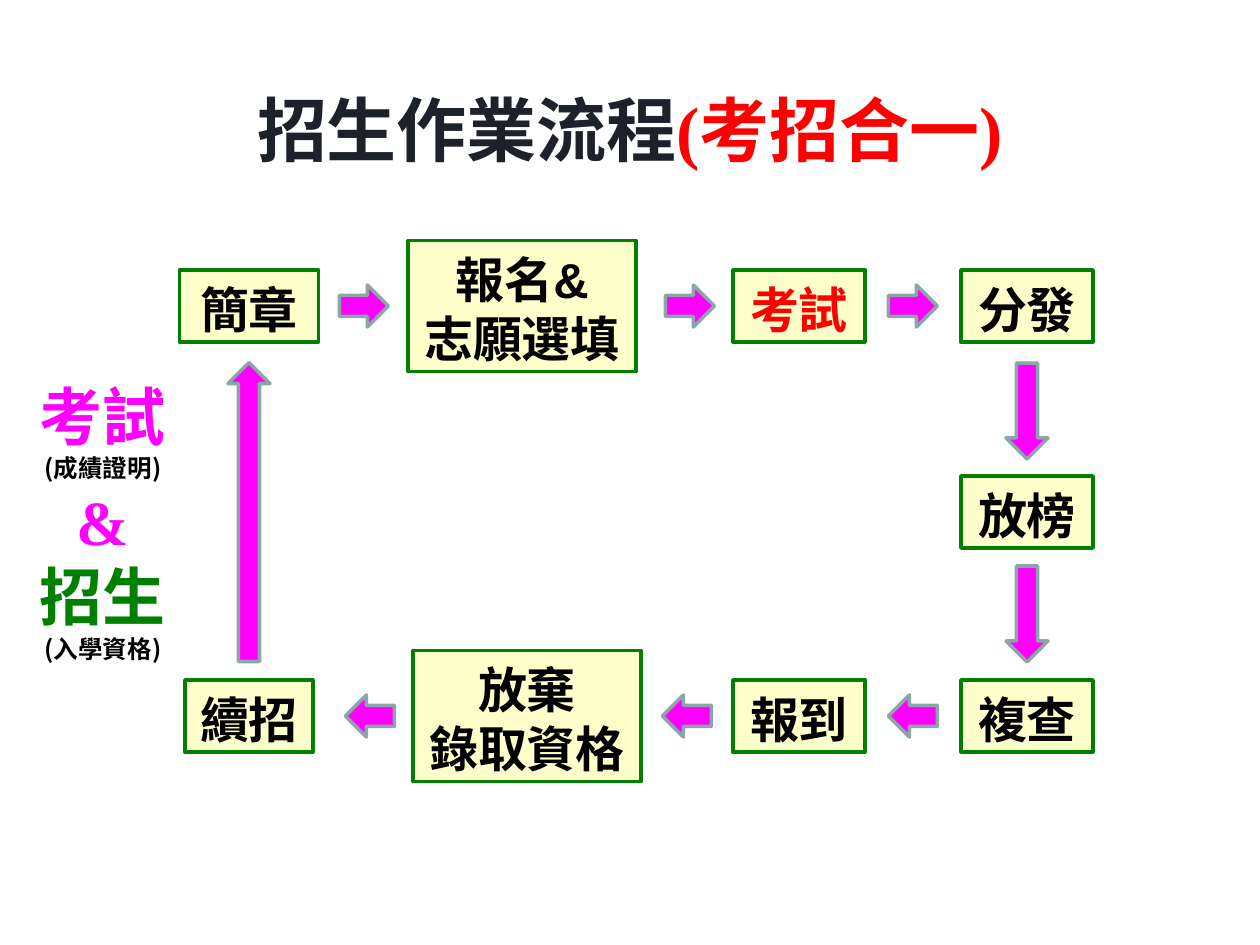
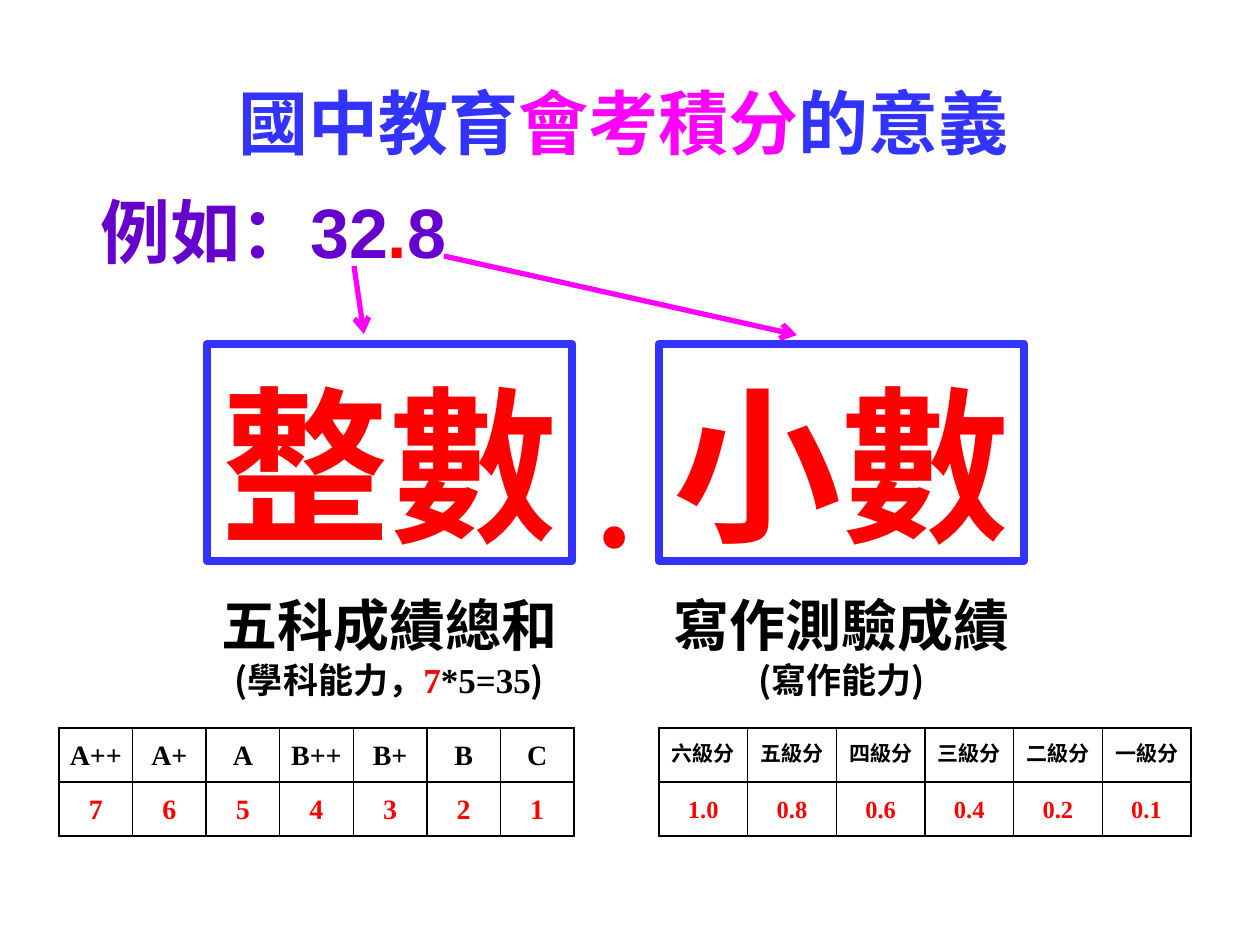
from lxml import etree
from pptx import Presentation
from pptx.dml.color import RGBColor
from pptx.enum.shapes import MSO_CONNECTOR, MSO_SHAPE
from pptx.enum.text import MSO_ANCHOR, PP_ALIGN
from pptx.oxml.ns import qn
from pptx.util import Emu, Pt

RECTANGLE = MSO_SHAPE.RECTANGLE
RIGHT, LEFT = MSO_SHAPE.RIGHT_ARROW, MSO_SHAPE.LEFT_ARROW
UP, DOWN = MSO_SHAPE.UP_ARROW, MSO_SHAPE.DOWN_ARROW
STRAIGHT = MSO_CONNECTOR.STRAIGHT
CENTER, ALIGN_LEFT = PP_ALIGN.CENTER, PP_ALIGN.LEFT
TOP, MIDDLE = MSO_ANCHOR.TOP, MSO_ANCHOR.MIDDLE

EMU_PER_PX = 914400 / 126
SLIDE_SIZE = (1260, 945)
LINE_RATIO = 1.2
BASELINE_SHIFT = 0.07

BLACK, RED, MAGENTA, GREEN = "000000", "FF0000", "FF00FF", "008000"
BLUE, PURPLE, INK = "3333FF", "6600CC", "1D2129"
CREAM, ARROW_EDGE = "FFFFCC", "8AA6A8"
LATIN, SERIF = "Arial", "Times New Roman"
CJK, CJK_TRADITIONAL = "Noto Sans CJK SC", "Noto Sans CJK TC"

TITLE_SIZE = 40
FLOW_TITLE = [[("招生作業流程", {"color": INK}), ("(考招合一)", {"font": SERIF, "color": RED})]]
SCORE_TITLE = [[("國中教育", {}), ("會考積分", {"color": MAGENTA}), ("的意義", {})]]

ROW_TOP, ROW_MIDDLE, ROW_BOTTOM = 306, 512, 716
STEPS = [
    (["簡章"], 249, ROW_TOP, 139, BLACK),
    (["報名&", "志願選填"], 522, ROW_TOP, 228, BLACK),
    (["考試"], 799, ROW_TOP, 132, RED),
    (["分發"], 1027, ROW_TOP, 132, BLACK),
    (["放榜"], 1027, ROW_MIDDLE, 132, BLACK),
    (["複查"], 1027, ROW_BOTTOM, 132, BLACK),
    (["報到"], 799, ROW_BOTTOM, 132, BLACK),
    (["放棄", "錄取資格"], 527, ROW_BOTTOM, 228, BLACK),
    (["續招"], 249, ROW_BOTTOM, 128, BLACK),
]
ARROWS = [
    (RIGHT, 364, ROW_TOP, 49),
    (RIGHT, 690, ROW_TOP, 49),
    (RIGHT, 913, ROW_TOP, 49),
    (DOWN, 1027, 411, 96),
    (DOWN, 1027, 614, 96),
    (LEFT, 913, ROW_BOTTOM, 49),
    (LEFT, 687, ROW_BOTTOM, 49),
    (LEFT, 370, ROW_BOTTOM, 49),
    (UP, 249, ROW_MIDDLE, 299),
]
ARROW_THICKNESS = 42
SMALL_NOTE = {"size": 14, "font": CJK_TRADITIONAL, "color": BLACK}
PURPOSES = [
    [("考試", {})],
    [("(成績證明)", SMALL_NOTE)],
    [("&", {"font": SERIF})],
    [("招生", {"color": GREEN})],
    [("(入學資格)", SMALL_NOTE)],
]

EXAMPLE = [[("例如：32", {}), (".", {"color": RED}), ("8", {})]]
NOTE = {"size": 20}
NOTE_SERIF = {"size": 20, "font": SERIF}
PARTS = [
    ("整數", 207, [
        [("五科成績總和", {})],
        [("(學科能力，", NOTE), ("7", {**NOTE_SERIF, "color": RED}), ("*5=35", NOTE_SERIF), (")", NOTE)],
    ]),
    ("小數", 659, [
        [("寫作測驗成績", {})],
        [("(寫作能力)", NOTE)],
    ]),
]
PART_WIDTH = 365
POINTERS = [((354, 266), (364, 334)), ((444, 256), (797, 335))]
TABLES = [
    (59, 515, 16, 16, ["A++", "A+", "A", "B++", "B+", "B", "C"], ["7", "6", "5", "4", "3", "2", "1"]),
    (659, 532, 12, 14, ["六級分", "五級分", "四級分", "三級分", "二級分", "一級分"],
     ["1.0", "0.8", "0.6", "0.4", "0.2", "0.1"]),
]
TABLE_TOP, TABLE_ROW = 728, 54


def px(length):
    return Emu(round(length * EMU_PER_PX))


def rgb(value):
    return RGBColor.from_string(value)


def write_text(frame, paragraphs, size=16, font=LATIN, color=BLACK, align=CENTER):
    for index, runs in enumerate(paragraphs):
        paragraph = frame.paragraphs[0] if index == 0 else frame.add_paragraph()
        paragraph.alignment = align
        paragraph.line_spacing = Pt(LINE_RATIO * runs[0][1].get("size", size))
        for text, changes in runs:
            style = {"size": size, "font": font, "color": color, **changes}
            run = paragraph.add_run()
            run.text = text
            run.font.size = Pt(style["size"])
            run.font.bold = True
            run.font.color.rgb = rgb(style["color"])
            run.font.name = style["font"]
            asian = style["font"] if style["font"].startswith("Noto") else CJK_TRADITIONAL
            etree.SubElement(run.font._element, qn("a:ea"), typeface=asian)


def fill_frame(shape, paragraphs, wrap=True, **text_format):
    frame = shape.text_frame
    frame.word_wrap = wrap
    frame.vertical_anchor = TOP
    first_size = paragraphs[0][0][1].get("size", text_format["size"])
    frame.margin_top = px(6) + Pt(BASELINE_SHIFT * first_size)
    frame.margin_bottom = 0
    write_text(frame, paragraphs, **text_format)


def add_label(slide, box, paragraphs, **text_format):
    label = slide.shapes.add_textbox(*map(px, box))
    fill_frame(label, paragraphs, **text_format)


def add_block(slide, kind, box, fill, edge, edge_width):
    shape = slide.shapes.add_shape(kind, *map(px, box))
    shape.shadow.inherit = False
    if fill:
        shape.fill.solid()
        shape.fill.fore_color.rgb = rgb(fill)
    else:
        shape.fill.background()
    shape.line.color.rgb = rgb(edge)
    shape.line.width = Pt(edge_width)
    return shape


def around(center_x, center_y, width, height):
    return center_x - width / 2, center_y - height / 2, width, height


def add_pointer(slide, start, end):
    pointer = slide.shapes.add_connector(STRAIGHT, *map(px, start + end))
    pointer.line.color.rgb = rgb(MAGENTA)
    pointer.line.width = Pt(3)
    etree.SubElement(pointer.line._get_or_add_ln(), qn("a:tailEnd"), type="arrow")
    etree.SubElement(pointer._element.spPr, qn("a:effectLst"))


def format_cell(cell, text, size, color):
    cell.margin_left = cell.margin_right = px(9)
    cell.margin_top = cell.margin_bottom = 0
    cell.vertical_anchor = MIDDLE
    properties = cell._tc.get_or_add_tcPr()
    for side in ("lnL", "lnR", "lnT", "lnB"):
        border = etree.SubElement(properties, qn("a:" + side), w=str(Pt(1)))
        solid = etree.SubElement(border, qn("a:solidFill"))
        etree.SubElement(solid, qn("a:srgbClr"), val=BLACK)
    cell.fill.background()
    write_text(cell.text_frame, [[(text, {})]], size=size, font=SERIF, color=color)


def add_score_table(slide, left, width, grade_size, score_size, grades, scores):
    box = left, TABLE_TOP, width, 2 * TABLE_ROW
    table = slide.shapes.add_table(2, len(grades), *map(px, box)).table
    table.first_row = table.horz_banding = False
    for column in table.columns:
        column.width = px(width / len(grades))
    for index, (grade, score) in enumerate(zip(grades, scores)):
        format_cell(table.cell(0, index), grade, grade_size, BLACK)
        format_cell(table.cell(1, index), score, score_size, RED)


def build_flow(slide):
    add_label(slide, (129, 76, 1002, 97), FLOW_TITLE, size=TITLE_SIZE)
    for lines, center_x, center_y, width, color in STEPS:
        box = around(center_x, center_y, width, 13 + 59 * len(lines))
        step = add_block(slide, RECTANGLE, box, CREAM, GREEN, 2)
        fill_frame(step, [[(line, {})] for line in lines], size=28, color=color)
    for kind, center_x, center_y, length in ARROWS:
        extent = (length, ARROW_THICKNESS) if kind in (LEFT, RIGHT) else (ARROW_THICKNESS, length)
        add_block(slide, kind, around(center_x, center_y, *extent), MAGENTA, ARROW_EDGE, 2)
    add_label(slide, (21, 367, 164, 301), PURPOSES, size=36, font=CJK, color=MAGENTA)


def build_score(slide):
    add_label(slide, (147, 69, 953, 97), SCORE_TITLE, size=TITLE_SIZE, color=BLUE)
    add_label(slide, (88, 178, 953, 97), EXAMPLE, size=TITLE_SIZE, color=PURPLE, align=ALIGN_LEFT)
    for name, left, meaning in PARTS:
        part = add_block(slide, RECTANGLE, (left, 344, PART_WIDTH, 217), None, BLUE, 5)
        fill_frame(part, [[(name, {})]], wrap=False, size=96, font=CJK, color=RED)
        add_label(slide, (left, 581, PART_WIDTH, 123), meaning, wrap=False, size=32, font=CJK)
    add_label(slide, (532, 393, 147, 183), [[("﹒", {})]], size=80, font=CJK, color=RED, align=ALIGN_LEFT)
    for start, end in POINTERS:
        add_pointer(slide, start, end)
    for table in TABLES:
        add_score_table(slide, *table)


def main():
    presentation = Presentation()
    presentation.slide_width, presentation.slide_height = map(px, SLIDE_SIZE)
    blank = presentation.slide_layouts[6]
    for build in (build_flow, build_score):
        build(presentation.slides.add_slide(blank))
    presentation.save("out.pptx")


if __name__ == "__main__":
    main()
